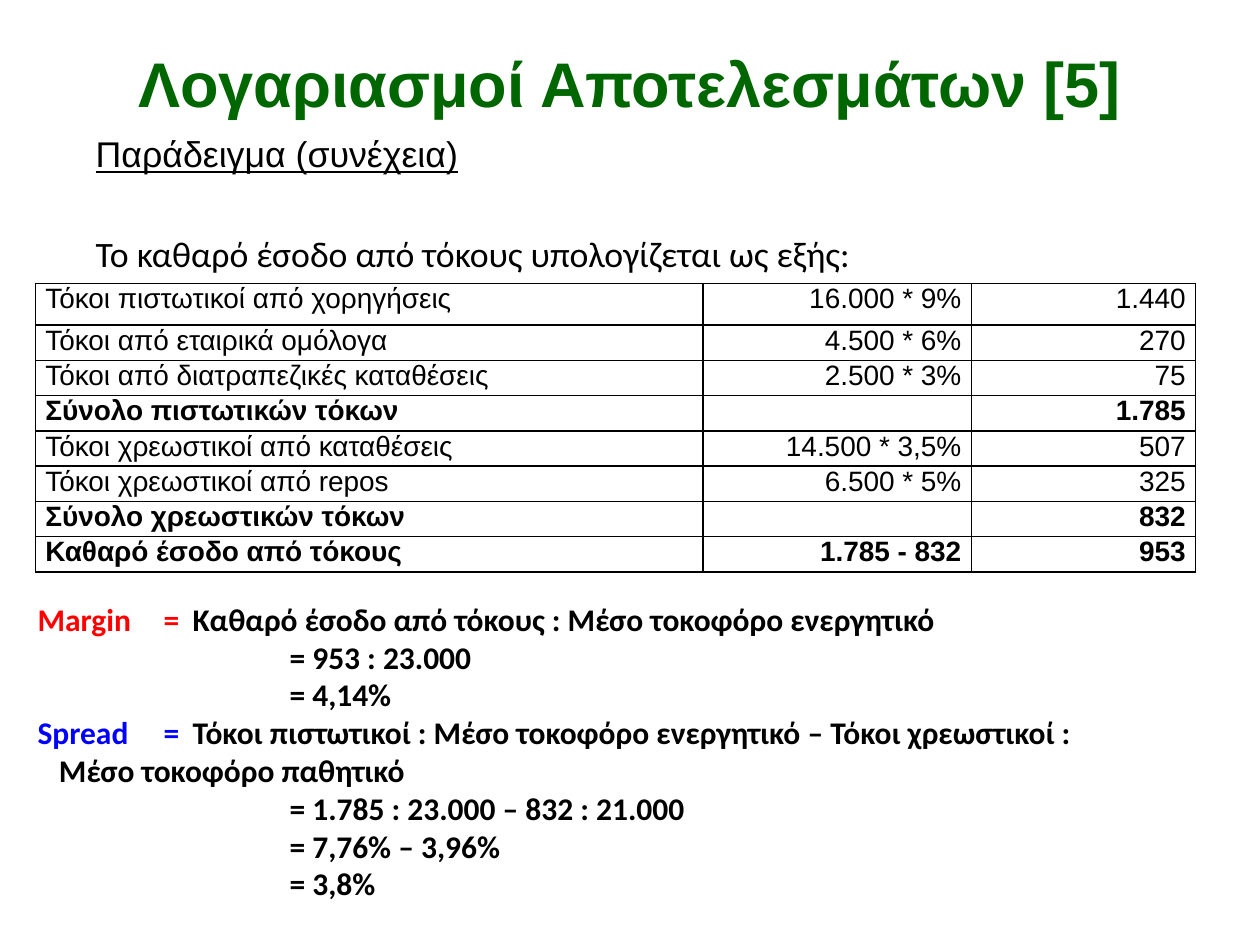
from lxml import etree
from pptx import Presentation, util as u
from pptx.dml.color import RGBColor
from pptx.enum import text as t
from pptx.oxml import ns

INK = {"black": "000000", "green": "006600", "red": "FF0000", "blue": "0000FF"}
LEFT, MID, RIGHT, JUST = (t.PP_ALIGN.LEFT, t.PP_ALIGN.CENTER,
                          t.PP_ALIGN.RIGHT, t.PP_ALIGN.JUSTIFY)

ROWS = [
    ("Τόκοι πιστωτικοί από χορηγήσεις", "16.000 * 9%", "1.440"),
    ("Τόκοι από εταιρικά ομόλογα", "4.500 * 6%", "270"),
    ("Τόκοι από διατραπεζικές καταθέσεις", "2.500 * 3%", "75"),
    ("Σύνολο πιστωτικών τόκων", "", "1.785"),
    ("Τόκοι χρεωστικοί από καταθέσεις", "14.500 * 3,5%", "507"),
    ("Τόκοι χρεωστικοί από repos", "6.500 * 5%", "325"),
    ("Σύνολο χρεωστικών τόκων", "", "832"),
    ("Καθαρό έσοδο από τόκους", "1.785 - 832", "953"),
]
TOTALS = (3, 6, 7)

# Each line: indent in inches, then (text, colour) runs
RATIOS = [
    (0, ("Margin\t=\t", "red"),
     ("Καθαρό έσοδο από τόκους : Μέσο τοκοφόρο ενεργητικό", "black")),
    (2, ("= 953 : 23.000", "black")),
    (2, ("= 4,14%", "black")),
    (0, ("Spread\t=\t", "blue"),
     ("Τόκοι πιστωτικοί : Μέσο τοκοφόρο ενεργητικό – Τόκοι χρεωστικοί :", "black")),
    (0.17, ("Μέσο τοκοφόρο παθητικό", "black")),
    (2, ("= 1.785 : 23.000 – 832 : 21.000", "black")),
    (2, ("= 7,76% – 3,96%", "black")),
    (2, ("= 3,8%", "black")),
]


class Deck:
    def __init__(self, slide):
        self.slide = slide

    def style(self, para, size, face="Arial", bold=False, ink="black", align=LEFT):
        para.alignment = align
        font = para.font
        font.size, font.name, font.bold = u.Pt(size), face, bold
        font.color.rgb = RGBColor.from_string(INK[ink])

    def box(self, x, y, w, h, anchor=t.MSO_ANCHOR.TOP):
        shape = self.slide.shapes.add_textbox(*map(u.Inches, (x, y, w, h)))
        frame = shape.text_frame
        frame.word_wrap = True
        frame.vertical_anchor = anchor
        return frame

    def indent(self, para, left, stops=()):
        """Set the left margin and tab stops, in inches."""
        props = para._p.get_or_add_pPr()
        props.set("marL", str(u.Inches(left)))
        if stops:
            tabs = etree.Element(ns.qn("a:tabLst"))
            for stop in stops:
                etree.SubElement(tabs, ns.qn("a:tab"), pos=str(u.Inches(stop)), algn="l")
            props.insert_element_before(tabs, "a:defRPr", "a:extLst")

    def border(self, cell):
        props = cell._tc.get_or_add_tcPr()
        for spot, side in enumerate(("lnL", "lnR", "lnT", "lnB")):
            line = etree.Element(ns.qn("a:" + side), w=str(u.Pt(1)))
            fill = etree.SubElement(line, ns.qn("a:solidFill"))
            etree.SubElement(fill, ns.qn("a:srgbClr"), val=INK["black"])
            props.insert(spot, line)

    def table(self, x, y, widths, heights, rows, strong):
        size = map(u.Inches, (x, y, sum(widths), sum(heights)))
        grid = self.slide.shapes.add_table(len(rows), len(widths), *size).table
        for col, width in zip(grid.columns, widths):
            col.width = u.Inches(width)
        for r, (row, height) in enumerate(zip(rows, heights)):
            grid.rows[r].height = u.Inches(height)
            for c, word in enumerate(row):
                cell = grid.cell(r, c)
                cell.margin_left = cell.margin_right = u.Inches(0.08)
                cell.margin_top = cell.margin_bottom = 0
                cell.fill.background()
                self.border(cell)
                cell.text = word
                self.style(cell.text_frame.paragraphs[0], 16, bold=r in strong,
                           align=RIGHT if c else JUST)


def main():
    prs = Presentation()
    prs.slide_width, prs.slide_height = u.Inches(10), u.Inches(7.5)
    deck = Deck(prs.slides.add_slide(prs.slide_layouts[6]))

    title = deck.box(0.5, 0.3, 9, 0.7, t.MSO_ANCHOR.MIDDLE)
    title.text = "Λογαριασμοί Αποτελεσμάτων [5]"
    deck.style(title.paragraphs[0], 36, bold=True, ink="green", align=MID)

    intro = deck.box(0.28, 1, 9.37, 1.1)
    intro.margin_left = u.Inches(0.48)
    intro.text = "Παράδειγμα (συνέχεια)\nΤο καθαρό έσοδο από τόκους υπολογίζεται ως εξής:"
    head, lead = intro.paragraphs
    deck.style(head, 20.4)
    head.font.underline = True
    head.space_before = u.Pt(4)
    deck.style(lead, 20.4, "Calibri")
    lead.space_before = u.Pt(32.5)

    deck.table(0.28, 2.25, (5.3, 2.13, 1.78), [0.33] + [0.28] * 7, ROWS, TOTALS)

    notes = deck.box(0.2, 4.7, 9.53, 2.52, t.MSO_ANCHOR.MIDDLE)
    for i, (left, *runs) in enumerate(RATIOS):
        para = notes.add_paragraph() if i else notes.paragraphs[0]
        deck.style(para, 18, "Calibri", bold=True)
        deck.indent(para, left, () if left else (1, 1.23))
        for word, ink in runs:
            run = para.add_run()
            run.text = word
            run.font.color.rgb = RGBColor.from_string(INK[ink])

    prs.save("out.pptx")


if __name__ == "__main__":
    main()
